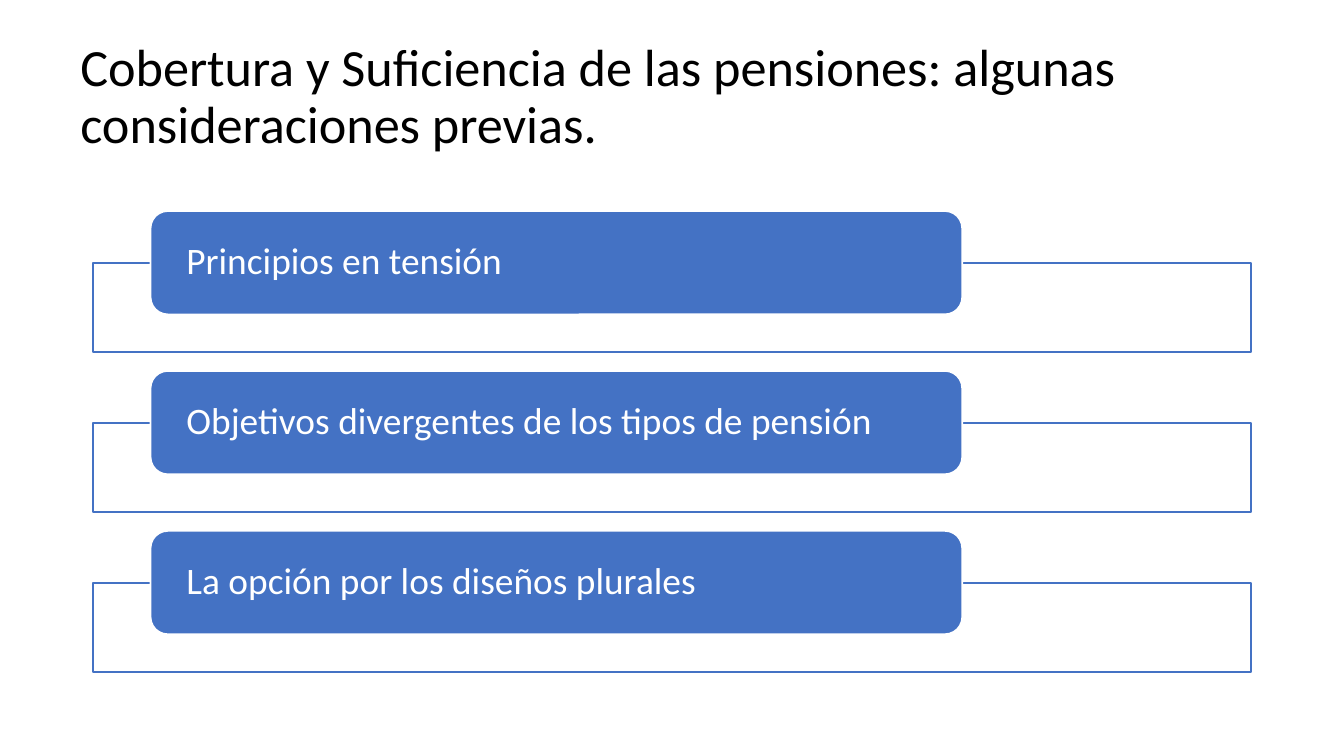
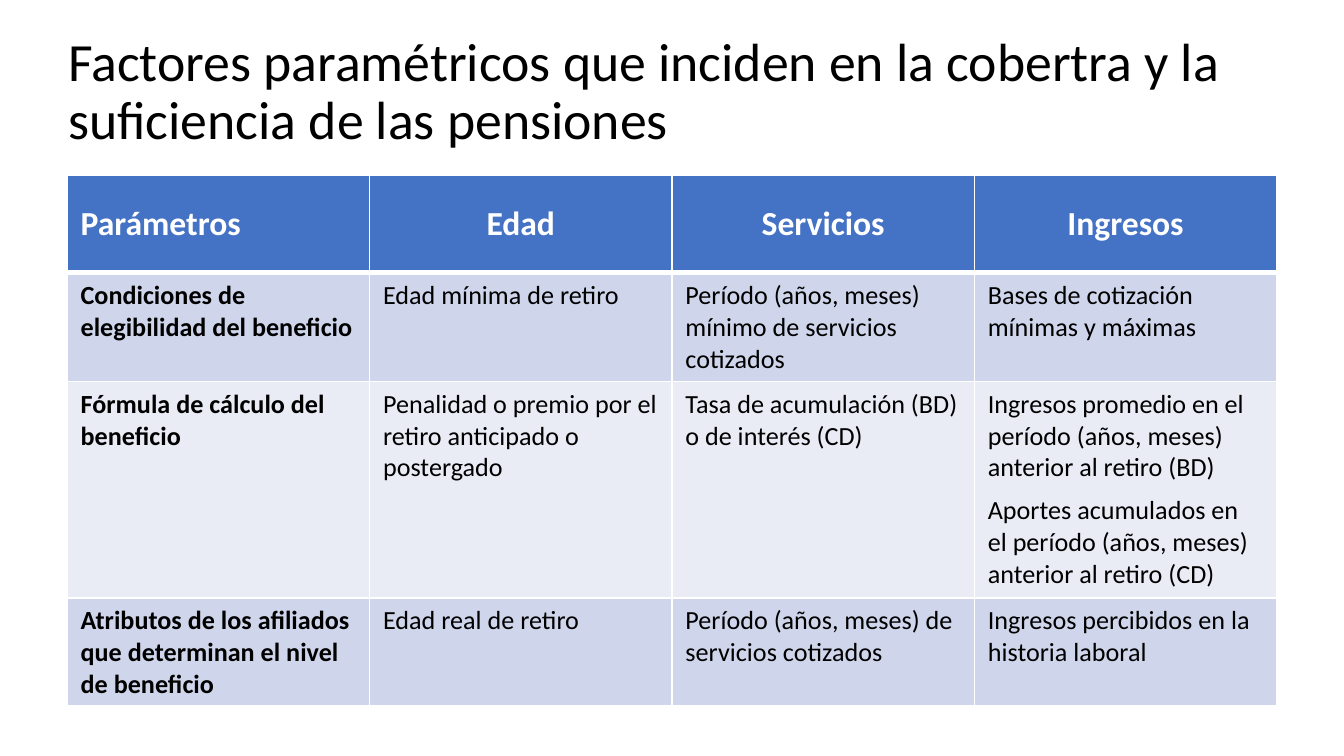
"""Build two slides on pension coverage and adequacy."""
from lxml import etree
from pptx import Presentation
from pptx import util as u
from pptx.dml.color import RGBColor
from pptx.enum import shapes, text
from pptx.oxml import ns

BLUE = RGBColor(0x44, 0x72, 0xC4)
WHITE = RGBColor(0xFF, 0xFF, 0xFF)
BLACK = RGBColor(0x00, 0x00, 0x00)
BAND_DARK = RGBColor(0xCF, 0xD5, 0xEA)
BAND_LIGHT = RGBColor(0xE9, 0xEB, 0xF5)
FONT = "Calibri"
LEFT, CENTER = text.PP_ALIGN.LEFT, text.PP_ALIGN.CENTER
MIDDLE, TOP = text.MSO_ANCHOR.MIDDLE, text.MSO_ANCHOR.TOP


def write(frame, content, size, color, bold=False, **paragraph_format):
    frame.word_wrap = True
    frame.text = content
    for paragraph in frame.paragraphs:
        for key, value in {"alignment": LEFT, **paragraph_format}.items():
            setattr(paragraph, key, value)
        for run in paragraph.runs:
            run.font.color.rgb = color
            for key, value in {"name": FONT, "size": u.Pt(size), "bold": bold}.items():
                setattr(run.font, key, value)


def add_titled_slide(title, left, top, size):
    slide = deck.slides.add_slide(deck.slide_layouts[6])
    heading = slide.shapes.add_textbox(u.Inches(left), u.Inches(top), u.Inches(9), u.Inches(0.94))
    heading.text_frame.vertical_anchor = MIDDLE
    write(heading.text_frame, title, size, BLACK, line_spacing=0.9)
    return slide


deck = Presentation()
deck.slide_width = u.Inches(10)
deck.slide_height = u.Inches(10) * 9 // 16

considerations = add_titled_slide(
    "Cobertura y Suficiencia de las pensiones: algunas consideraciones previas.", 0.5, 0.26, 28)
topics = [
    "Principios en tensión",
    "Objetivos divergentes de los tipos de pensión",
    "La opción por los diseños plurales",
]
for index, topic in enumerate(topics):
    label_top = 1.57 + 1.19 * index
    panel = considerations.shapes.add_shape(
        shapes.MSO_SHAPE.RECTANGLE,
        u.Inches(0.69), u.Inches(label_top + 0.39), u.Inches(8.62), u.Inches(0.66))
    label = considerations.shapes.add_shape(
        shapes.MSO_SHAPE.ROUNDED_RECTANGLE,
        u.Inches(1.12), u.Inches(label_top), u.Inches(6.04), u.Inches(0.77))
    for box, fill, line in ((panel, WHITE, BLUE), (label, BLUE, WHITE)):
        box.shadow.inherit = False
        box.fill.solid()
        box.fill.fore_color.rgb = fill
        box.line.color.rgb = line
        box.line.width = u.Pt(1)
    panel_color = panel.fill._xPr.find(".//" + ns.qn("a:srgbClr"))
    etree.SubElement(panel_color, ns.qn("a:alpha"), val="90000")
    label_format = {
        "vertical_anchor": MIDDLE,
        "margin_left": u.Inches(0.23), "margin_right": u.Inches(0.23),
        "margin_top": 0, "margin_bottom": 0,
    }
    for key, value in label_format.items():
        setattr(label.text_frame, key, value)
    write(label.text_frame, topic, 20, WHITE, line_spacing=0.9)

factors = add_titled_slide(
    "Factores paramétricos que inciden en la cobertra y la suficiencia de las pensiones",
    0.41, 0.22, 28.8)
parameters = [
    ["Parámetros", "Edad", "Servicios", "Ingresos"],
    ["Condiciones de elegibilidad del beneficio",
     "Edad mínima de retiro",
     "Período (años, meses) mínimo de servicios cotizados",
     "Bases de cotización mínimas y máximas"],
    ["Fórmula de cálculo del beneficio",
     "Penalidad o premio por el retiro anticipado o postergado",
     "Tasa de acumulación (BD) o de interés (CD)",
     "Ingresos promedio en el período (años, meses) anterior al retiro (BD)\n"
     "Aportes acumulados en el período (años, meses) anterior al retiro (CD)"],
    ["Atributos de los afiliados que determinan el nivel de beneficio",
     "Edad real de retiro",
     "Período (años, meses) de servicios cotizados",
     "Ingresos percibidos en la historia laboral"],
]
row_heights = [0.73, 0.81, 1.61, 0.8]
row_fills = [BLUE, BAND_DARK, BAND_LIGHT, BAND_DARK]
grid = factors.shapes.add_table(
    len(parameters), len(parameters[0]),
    u.Inches(0.5), u.Inches(1.3), u.Inches(9), u.Inches(sum(row_heights))).table
for row, (entries, height, fill) in enumerate(zip(parameters, row_heights, row_fills)):
    grid.rows[row].height = u.Inches(height)
    header = row == 0
    for column, entry in enumerate(entries):
        cell = grid.cell(row, column)
        cell.vertical_anchor = MIDDLE if header else TOP
        write(cell.text_frame, entry, 18 if header else 14, WHITE if header else BLACK,
              bold=header or column == 0, alignment=CENTER if header and column else LEFT)
        for extra in cell.text_frame.paragraphs[1:]:
            extra.space_before = u.Pt(6)
        properties = cell._tc.get_or_add_tcPr()
        for side in ("L", "R", "T", "B"):
            thick = (header and side == "B") or (row == 1 and side == "T")
            border = etree.SubElement(
                properties, ns.qn(f"a:ln{side}"), w=str(u.Pt(3 if thick else 1)))
            paint = etree.SubElement(border, ns.qn("a:solidFill"))
            etree.SubElement(paint, ns.qn("a:srgbClr"), val=str(WHITE))
        cell.fill.solid()
        cell.fill.fore_color.rgb = fill

deck.save("out.pptx")
